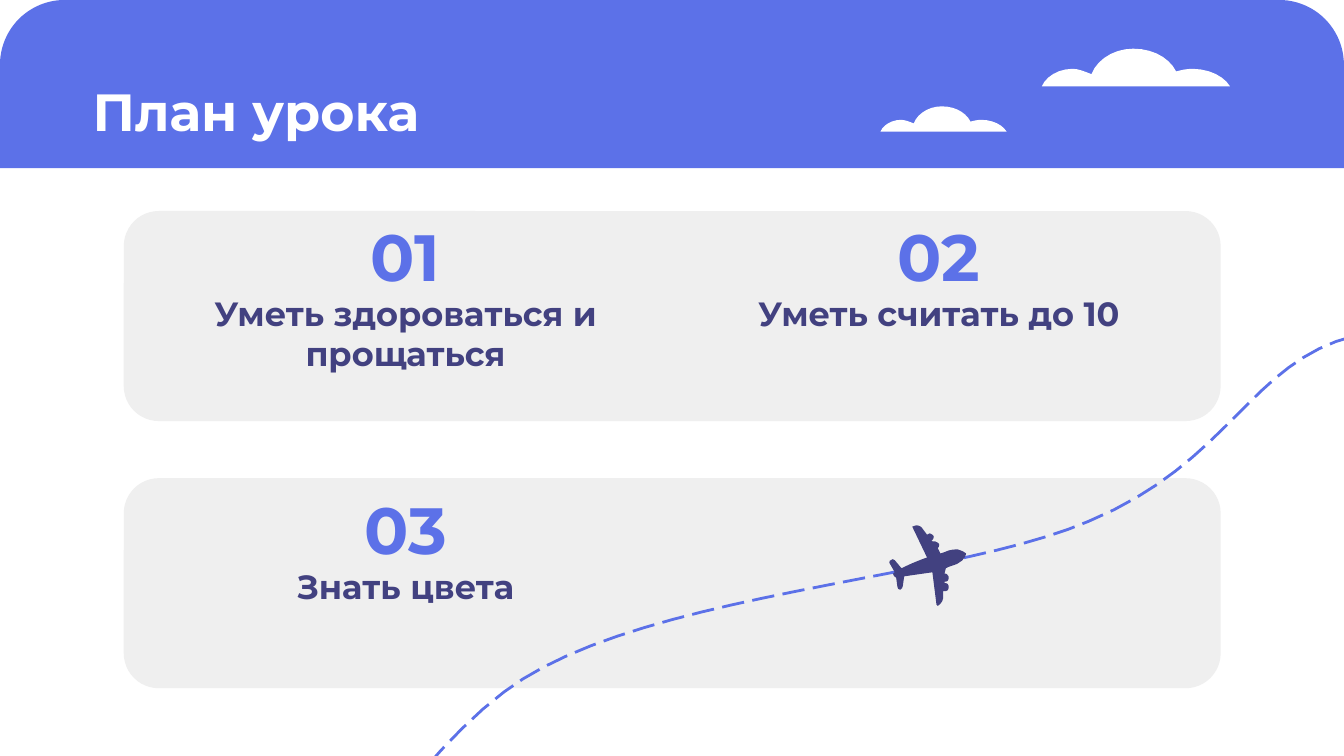
from dataclasses import dataclass
from math import ceil, dist, sqrt

from pptx import Presentation
from pptx.dml.color import RGBColor
from pptx.enum.dml import MSO_LINE
from pptx.enum.shapes import MSO_SHAPE
from pptx.enum.text import MSO_ANCHOR, MSO_AUTO_SIZE, PP_ALIGN
from pptx.util import Cm, Pt

LEFT, CENTER = PP_ALIGN.LEFT, PP_ALIGN.CENTER
TOP, MIDDLE = MSO_ANCHOR.TOP, MSO_ANCHOR.MIDDLE
ROUND_RECT = MSO_SHAPE.ROUNDED_RECTANGLE
ROUND_TOP = MSO_SHAPE.ROUND_2_SAME_RECTANGLE
LONG_DASH = MSO_LINE.LONG_DASH
NO_AUTOFIT = MSO_AUTO_SIZE.NONE
TITLE_ONLY = 5


@dataclass(frozen=True)
class Theme:
    font: str = "Montserrat"
    blue: str = "5C71E8"
    navy: str = "424180"
    gray: str = "EFEFEF"
    white: str = "FFFFFF"
    title_size: int = 28
    number_size: int = 35
    goal_size: int = 18


THEME = Theme()

TITLE = "План урока"
GOALS = ["Уметь здороваться и прощаться", "Уметь считать до 10", "Знать цвета"]

PAGE_WIDTH, PAGE_HEIGHT = 25.4, 14.29
HEADER_HEIGHT = 3.18
PANEL_LEFT, PANEL_WIDTH, PANEL_HEIGHT = 2.34, 20.73, 3.97
PANEL_TOP, PANEL_STEP = 3.99, 5.05
GOAL_LEFT, GOAL_TOP, GOAL_WIDTH, GOAL_HEIGHT = 3.51, 5.28, 8.31, 0.99
NUMBER_TOP, NUMBER_WIDTH, NUMBER_HEIGHT = 3.91, 2.9, 1.85
COLUMNS, COLUMN_STEP, ROW_STEP = 2, 10.08, 5.16
INSET = 0.25
UNITS_PER_CM = 39.37

CLOUD = [
    (68, 0), (83, 0, 95, 7, 100, 17), (103, 16, 108, 15, 112, 15),
    (125, 15, 136, 21, 140, 28), (0, 28), (3, 21, 12, 15, 23, 15),
    (27, 15, 32, 17, 37, 19), (41, 8, 54, 0, 68, 0),
]
CLOUDS = [(19.69, 0.92, 1), (16.64, 2.01, 0.67)]

ROUTE = [
    (227, 830), (162, 791, 277, 589, 375, 515), (472, 441, 705, 433, 810, 388),
    (916, 344, 930, 269, 1008, 250), (1086, 231, 1319, 190, 1278, 273),
    (1237, 356, 937, 655, 761, 748), (586, 841, 291, 869, 227, 830),
]

PLANE = [
    (20, 0), (17, 1), (28, 24), (22, 26, 15, 29, 9, 32), (4, 26),
    (3, 25, 2, 25, 1, 26), (0, 26, 0, 27, 0, 28), (4, 35),
    (3, 36, 2, 36, 3, 37), (3, 38, 4, 38, 5, 39), (6, 46),
    (6, 47, 7, 48, 8, 48), (9, 47, 10, 47, 10, 45), (11, 38), (32, 35),
    (35, 59), (36, 60), (38, 59, 40, 56, 40, 54), (40, 49), (42, 49),
    (43, 49, 44, 48, 44, 47), (44, 45), (44, 44, 43, 43, 42, 43), (41, 43),
    (41, 42), (42, 42), (43, 42, 44, 41, 44, 40), (44, 38),
    (43, 37, 43, 36, 42, 36), (41, 36), (42, 32), (44, 31),
    (57, 28, 57, 21, 57, 21), (57, 21, 55, 19, 51, 18),
    (48, 18, 45, 18, 41, 20), (38, 21), (36, 17), (37, 17, 37, 15, 37, 14),
    (36, 13), (34, 12), (32, 12), (31, 11), (32, 11), (33, 10, 33, 9, 33, 8),
    (32, 7), (30, 6), (28, 7), (25, 3), (24, 1, 22, 0, 20, 0),
]
PLANE_LEFT, PLANE_TOP = 16.81, 9.93


def color(value):
    return RGBColor.from_string(value)


def paint(shape, fill=None, line=None):
    shape.shadow.inherit = False
    if fill:
        shape.fill.solid()
        shape.fill.fore_color.rgb = color(fill)
    else:
        shape.fill.background()
    if line:
        shape.line.color.rgb = color(line)
        shape.line.width = Pt(1.5)
        shape.line.dash_style = LONG_DASH
    else:
        shape.line.fill.background()


def add_panel(page, kind, left, top, width, height, fill, corners):
    panel = page.shapes.add_shape(kind, Cm(left), Cm(top), Cm(width), Cm(height))
    for index, corner in enumerate(corners):
        panel.adjustments[index] = corner
    paint(panel, fill)


def flatten(outline):
    points = [outline[0]]
    for step in outline[1:]:
        start, end = points[-1], step[-2:]
        if len(step) == 6:
            controls = (start, step[:2], step[2:4], end)
            count = ceil(sqrt(dist(start, end)))
            for index in range(1, count):
                t = index / count
                weights = ((1 - t) ** 3, 3 * t * (1 - t) ** 2, 3 * t * t * (1 - t), t ** 3)
                points.append(tuple(
                    sum(weight * control[axis] for weight, control in zip(weights, controls))
                    for axis in (0, 1)))
        points.append(end)
    return points


def add_outline(page, outline, left=0, top=0, scale=1, fill=None, line=None):
    unit = scale / UNITS_PER_CM
    points = [(Cm(left + x * unit), Cm(top + y * unit)) for x, y in flatten(outline)]
    builder = page.shapes.build_freeform(*points[0])
    builder.add_line_segments(points[1:-1], close=True)
    paint(builder.convert_to_shape(), fill, line)


def write(box, text, *, left, top, width, height, size, ink,
          align=CENTER, anchor=TOP, after=0):
    box.left, box.top, box.width, box.height = Cm(left), Cm(top), Cm(width), Cm(height)
    frame = box.text_frame
    frame.word_wrap = True
    frame.auto_size = NO_AUTOFIT
    frame.vertical_anchor = anchor
    frame.margin_left = frame.margin_right = Cm(INSET)
    frame.margin_top = frame.margin_bottom = Cm(INSET)
    para = frame.paragraphs[0]
    para.alignment = align
    para.space_before, para.space_after = Pt(0), Pt(after)
    span = para.add_run()
    span.text = text
    span.font.name, span.font.size, span.font.bold = THEME.font, Pt(size), True
    span.font.color.rgb = color(ink)


def main():
    deck = Presentation()
    deck.slide_width, deck.slide_height = Cm(PAGE_WIDTH), Cm(PAGE_HEIGHT)
    page = deck.slides.add_slide(deck.slide_layouts[TITLE_ONLY])

    add_panel(page, ROUND_TOP, 0, 0, PAGE_WIDTH, HEADER_HEIGHT, THEME.blue, (0.385, 0))
    for row in range(2):
        add_panel(page, ROUND_RECT, PANEL_LEFT, PANEL_TOP + row * PANEL_STEP,
                  PANEL_WIDTH, PANEL_HEIGHT, THEME.gray, (0.167,))
    for left, top, scale in CLOUDS:
        add_outline(page, CLOUD, left, top, scale, fill=THEME.white)

    title = page.shapes.title
    page.shapes.element.append(title.element)
    write(title, TITLE, left=1.5, top=1.24, width=11.2, height=1.6,
          size=THEME.title_size, ink=THEME.white, align=LEFT)

    for index, goal in enumerate(GOALS):
        row, column = divmod(index, COLUMNS)
        left = GOAL_LEFT + column * COLUMN_STEP
        drop = row * ROW_STEP
        write(page.shapes.add_textbox(0, 0, 0, 0), goal, left=left,
              top=GOAL_TOP + drop, width=GOAL_WIDTH, height=GOAL_HEIGHT,
              size=THEME.goal_size, ink=THEME.navy, after=16)
        write(page.shapes.add_textbox(0, 0, 0, 0), f"{index + 1:02d}",
              left=left + (GOAL_WIDTH - NUMBER_WIDTH) / 2, top=NUMBER_TOP + drop,
              width=NUMBER_WIDTH, height=NUMBER_HEIGHT,
              size=THEME.number_size, ink=THEME.blue, anchor=MIDDLE)

    add_outline(page, ROUTE, line=THEME.blue)
    add_outline(page, PLANE, PLANE_LEFT, PLANE_TOP, fill=THEME.navy)
    deck.save("out.pptx")


if __name__ == "__main__":
    main()
